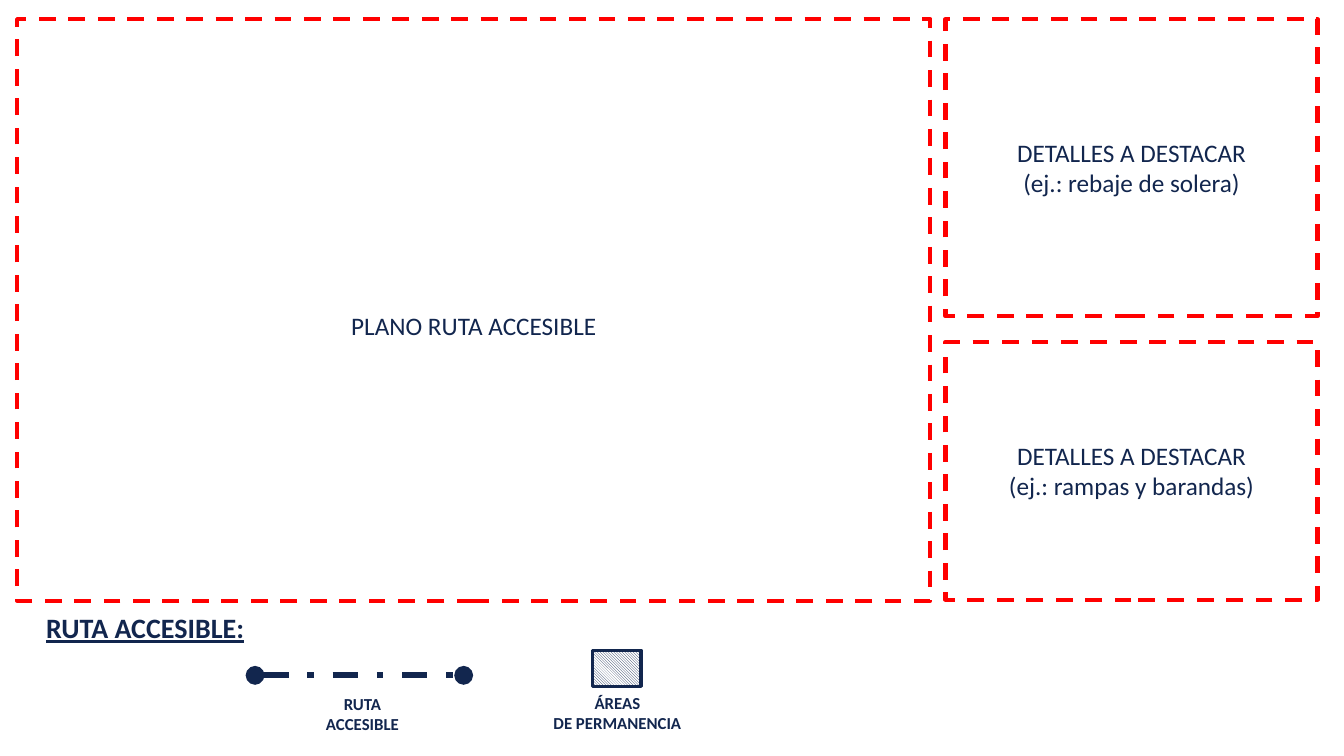
from lxml.etree import SubElement
from pptx import Presentation
from pptx.dml.color import RGBColor
from pptx.enum.dml import MSO_LINE, MSO_PATTERN
from pptx.enum.shapes import MSO_CONNECTOR, MSO_SHAPE
from pptx.enum.text import MSO_ANCHOR, PP_ALIGN
from pptx.oxml.ns import qn
from pptx.util import Inches, Pt

COLORS = {"navy": "12264E", "red": "FF0000", "white": "FFFFFF"}
FONT = "Calibri"


def color(name):
    return RGBColor.from_string(COLORS[name])


class RouteSlide:
    """Draws on one slide; lengths are percentages of its width and height."""

    def __init__(self, presentation):
        self.column = presentation.slide_width / 100
        self.row = presentation.slide_height / 100
        self.shapes = presentation.slides.add_slide(presentation.slide_layouts[6]).shapes

    def place(self, left, top, width, height):
        return (round(left * self.column), round(top * self.row),
                round(width * self.column), round(height * self.row))

    def fill_text(self, shape, text, size, align=PP_ALIGN.CENTER, bold=False, underline=False):
        frame = shape.text_frame
        frame.word_wrap = True
        frame.text = text
        for paragraph in frame.paragraphs:
            paragraph.alignment = align
            for run in paragraph.runs:
                run.font.name = FONT
                run.font.size = Pt(size)
                run.font.bold = bold
                run.font.underline = underline
                run.font.color.rgb = color("navy")

    def label(self, box, text, size=12, **style):
        shape = self.shapes.add_textbox(*self.place(*box))
        self.fill_text(shape, text, size, bold=True, **style)

    def rectangle(self, box, line_color, line_width):
        shape = self.shapes.add_shape(MSO_SHAPE.RECTANGLE, *self.place(*box))
        shape.shadow.inherit = False
        shape.fill.background()
        shape.line.color.rgb = color(line_color)
        shape.line.width = Pt(line_width)
        return shape

    def frame(self, box, text, drop=0):
        """Dashed area with centred text, moved down by drop inches."""
        shape = self.rectangle(box, "red", 3)
        shape.line.dash_style = MSO_LINE.DASH
        self.fill_text(shape, text, 18)
        shape.text_frame.vertical_anchor = MSO_ANCHOR.MIDDLE
        shape.text_frame.margin_top = Inches(0.05 + 2 * drop)

    def hatched_swatch(self, box):
        fill = self.rectangle(box, "navy", 2.25).fill
        fill.patterned()
        fill.pattern = MSO_PATTERN.DARK_DOWNWARD_DIAGONAL
        fill.fore_color.rgb = color("navy")
        fill.back_color.rgb = color("white")

    def route_line(self, left, right, top):
        start_x, start_y, end_x, end_y = self.place(left, top, right, top)
        connector = self.shapes.add_connector(
            MSO_CONNECTOR.STRAIGHT, start_x, start_y, end_x, end_y)
        connector.line.color.rgb = color("navy")
        connector.line.width = Pt(4.5)
        connector.line.dash_style = MSO_LINE.DASH_DOT
        properties = connector._element.spPr
        outline = properties.find(qn("a:ln"))
        for end in ("a:headEnd", "a:tailEnd"):
            SubElement(outline, qn(end), type="oval")
        SubElement(properties, qn("a:effectLst"))


def main():
    presentation = Presentation()
    presentation.slide_width = Inches(13.333)
    presentation.slide_height = Inches(7.5)
    slide = RouteSlide(presentation)

    top, detail_left, detail_width = 2.53, 70.35, 27.68
    slide.frame((1.28, top, 67.95, 76.93), "PLANO RUTA ACCESIBLE", drop=0.15)
    details = [(top, 39.33, "rebaje de solera"), (45.2, 34.13, "rampas y barandas")]
    for detail_top, height, example in details:
        slide.frame((detail_left, detail_top, detail_width, height),
                    f"DETALLES A DESTACAR\n(ej.: {example})")

    slide.label((2.7, 80.13, 33.23, 5.87), "RUTA ACCESIBLE:", 20,
                align=PP_ALIGN.LEFT, underline=True)
    slide.route_line(18.98, 34.5, 89.33)
    slide.label((20.63, 91.07, 12.68, 6.67), "RUTA\nACCESIBLE")
    slide.hatched_swatch((44.1, 86, 3.6, 4.8))
    slide.label((37.95, 90.93, 15.98, 6.67), "ÁREAS\nDE PERMANENCIA")

    presentation.save("out.pptx")


if __name__ == "__main__":
    main()
